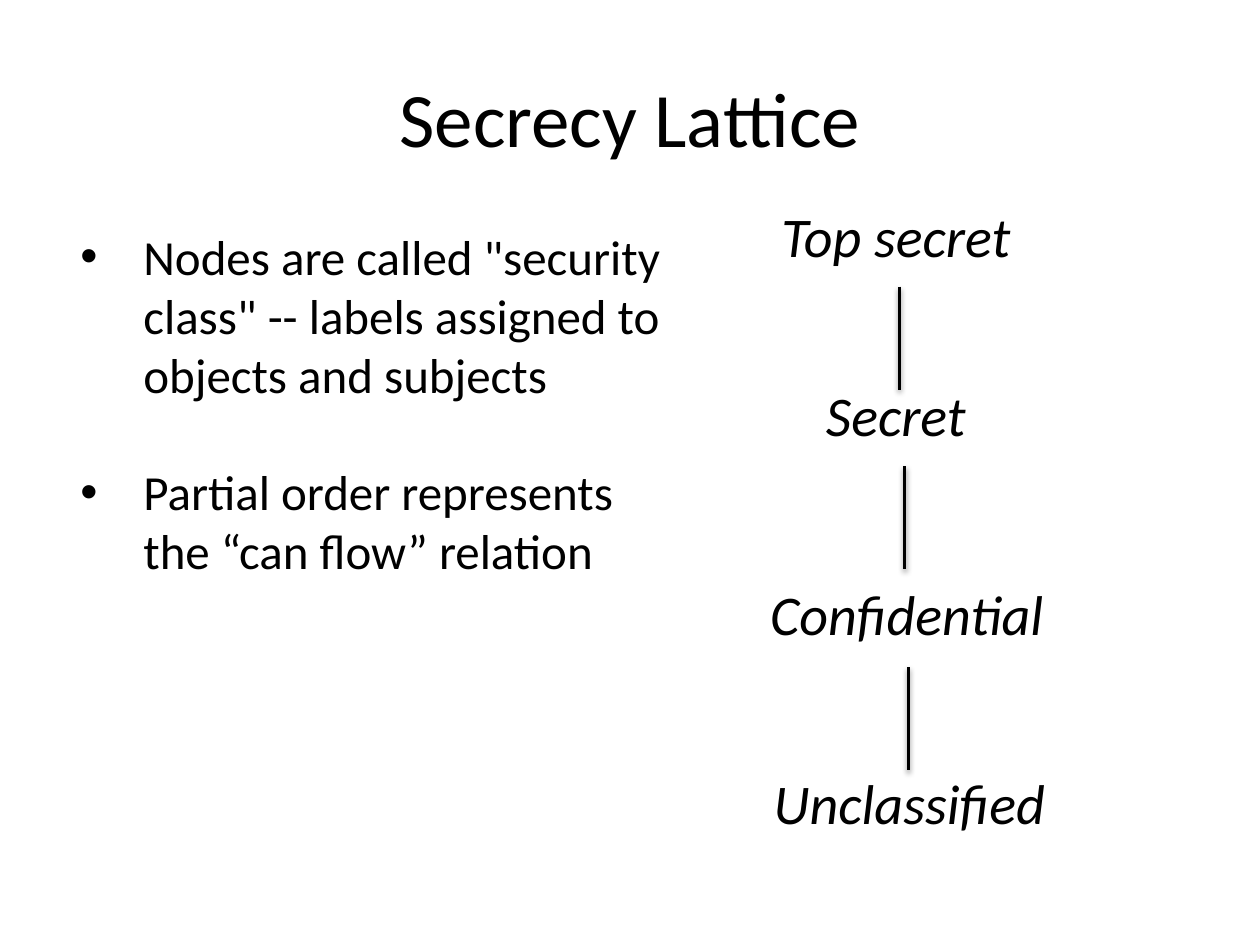
from pptx import Presentation
from pptx.util import Pt
from pptx.dml.color import RGBColor
from pptx.enum.text import PP_ALIGN as Al, MSO_ANCHOR as Anc
from pptx.enum.shapes import MSO_CONNECTOR as Con
from lxml.etree import SubElement
from pptx.oxml.ns import qn

BLACK = RGBColor(0, 0, 0)
FONT = "Calibri"
TITLE = "Secrecy Lattice"
POINTS = [
    'Nodes are called "security class" -- labels assigned to objects and subjects',
    "Partial order represents the “can flow” relation",
]
LEVELS = [
    ("Top secret", 394, 111.6, 236),
    ("Secret", 394, 213.8, 236),
    ("Confidential", 426.2, 327.6, 184),
    ("Unclassified", 427.7, 435.6, 184),
]
LINKS = [(514.1, 163.8), (517, 266.4), (519.1, 381.2)]
LINK_H = 58.8


def write(box, texts, size, align=Al.LEFT, italic=False, bullet=False, gap=0):
    frame = box.text_frame
    frame.word_wrap = True
    for i, text in enumerate(texts):
        para = frame.paragraphs[0] if i == 0 else frame.add_paragraph()
        para.alignment = align
        para.space_before = Pt(gap if i else 0)
        run = para.add_run()
        run.text = text
        font = run.font
        font.name, font.size, font.italic = FONT, Pt(size), italic
        font.color.rgb = BLACK
        if bullet:
            props = para._p.get_or_add_pPr()
            props.set("marL", str(Pt(36)))
            props.set("indent", str(Pt(-36)))
            SubElement(props, qn("a:buFont")).set("typeface", "Arial")
            SubElement(props, qn("a:buChar")).set("char", "•")


def main():
    deck = Presentation()
    deck.slide_width, deck.slide_height = Pt(720), Pt(540)
    slide = deck.slides.add_slide(deck.slide_layouts[5])
    shapes = slide.shapes

    title = shapes.title
    title.left, title.top, title.width, title.height = map(Pt, (36, 21.6, 648, 90))
    title.text_frame.vertical_anchor = Anc.MIDDLE
    write(title, [TITLE], 44, align=Al.CENTER)

    for name, x, y, w in LEVELS:
        box = shapes.add_textbox(Pt(x), Pt(y), Pt(w), Pt(46))
        write(box, [name], 32, align=Al.CENTER, italic=True)

    for x, y in LINKS:
        link = shapes.add_connector(Con.STRAIGHT, Pt(x), Pt(y), Pt(x), Pt(y + LINK_H))
        link.line.color.rgb = BLACK
        link.line.width = Pt(2)

    body = shapes.add_textbox(Pt(38.9), Pt(126), Pt(354), Pt(211))
    write(body, POINTS, 28, bullet=True, gap=33.6)

    deck.save("out.pptx")


if __name__ == "__main__":
    main()
